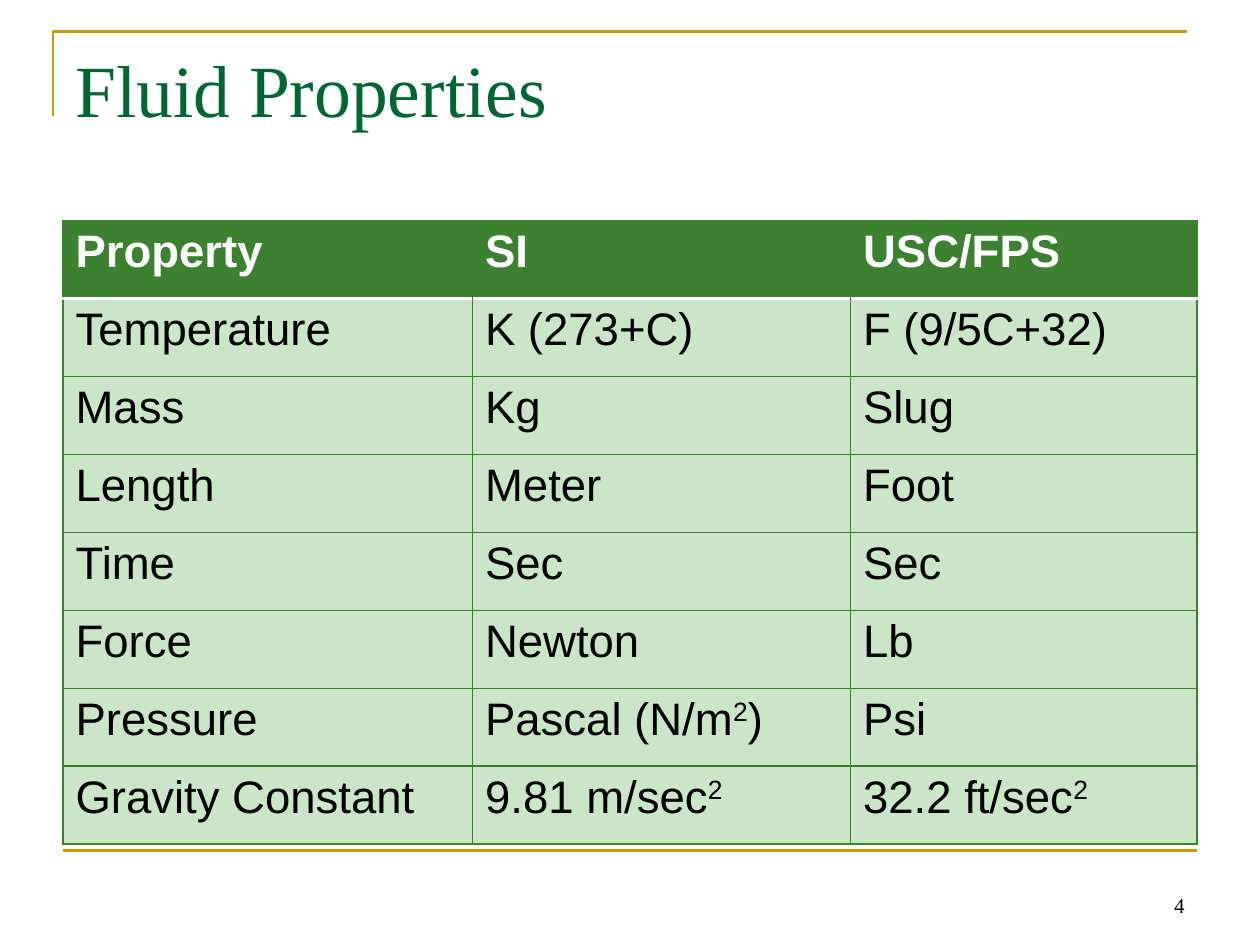
from lxml import etree
from pptx import Presentation, util as u
from pptx.dml.color import RGBColor
from pptx.enum import shapes, text
from pptx.oxml.ns import qn

HUES = {"gold": "CC9900", "title": "006633", "head": "3B812F", "body": "CBE5C9",
        "edge": "38802C", "white": "FFFFFF", "black": "000000"}
SERIF, SANS = "Times New Roman", "Arial"
ROWS = [
    ["Property", "SI", "USC/FPS"],
    ["Temperature", "K (273+C)", "F (9/5C+32)"],
    ["Mass", "Kg", "Slug"],
    ["Length", "Meter", "Foot"],
    ["Time", "Sec", "Sec"],
    ["Force", "Newton", "Lb"],
    ["Pressure", "Pascal (N/m^2^)", "Psi"],
    ["Gravity Constant", "9.81 m/sec^2^", "32.2 ft/sec^2^"],
]


class Deck:
    """Holds the style and the current slide, on a grid of 40 columns by 30 rows."""

    def __init__(self):
        self.prs = Presentation()
        self.prs.slide_width, self.prs.slide_height = u.Inches(10), u.Inches(7.5)
        self.slide = self.prs.slides.add_slide(self.prs.slide_layouts[5])
        self.items = self.slide.shapes

    def grid(self, *cells):
        return [u.Inches(cell / 4) for cell in cells]

    def hue(self, name):
        return RGBColor.from_string(HUES[name])

    def add_words(self, para, words, size, face, hue, bold=False):
        for i, part in enumerate(words.split("^")):
            if not part:
                continue
            run = para.add_run()
            run.text = part
            look = {"size": u.Pt(size), "name": face, "bold": bold}
            for key, value in look.items():
                setattr(run.font, key, value)
            run.font.color.rgb = self.hue(hue)
            if i % 2:
                run.font._element.set("baseline", "30000")

    def fill_box(self, box, words, size, hue, anchor, align):
        frame = box.text_frame
        look = {"word_wrap": True, "vertical_anchor": anchor,
                "auto_size": text.MSO_AUTO_SIZE.NONE}
        for key, value in look.items():
            setattr(frame, key, value)
        para = frame.paragraphs[0]
        para.alignment = align
        self.add_words(para, words, size, SERIF, hue)

    def title(self, words, *area):
        box = self.items.title
        for key, value in zip(("left", "top", "width", "height"), self.grid(*area)):
            setattr(box, key, value)
        self.fill_box(box, words, 42, "title", text.MSO_ANCHOR.TOP, text.PP_ALIGN.LEFT)

    def label(self, words, *area):
        box = self.items.add_textbox(*self.grid(*area))
        self.fill_box(box, words, 12, "black", text.MSO_ANCHOR.BOTTOM, text.PP_ALIGN.RIGHT)

    def stroke(self, item):
        item.line.color.rgb = self.hue("gold")
        item.line.width = u.Pt(1.5)

    def rule(self, *ends):
        line = self.items.add_connector(shapes.MSO_CONNECTOR.STRAIGHT, *self.grid(*ends))
        self.stroke(line)
        etree.SubElement(line._element.spPr, qn("a:effectLst"))

    def corner(self, *points):
        first, *rest = [self.grid(*point) for point in points]
        pen = self.items.build_freeform(*first)
        pen.add_line_segments(rest, close=False)
        shape = pen.convert_to_shape()
        shape.fill.background()
        shape.shadow.inherit = False
        self.stroke(shape)

    def border(self, cell, side, hue, width):
        props = cell._tc.get_or_add_tcPr()
        line = etree.SubElement(props, qn("a:ln" + side), w=str(u.Pt(width)))
        fill = etree.SubElement(line, qn("a:solidFill"))
        etree.SubElement(fill, qn("a:srgbClr"), val=HUES[hue])

    def table(self, rows, widths, *area):
        grid = self.items.add_table(len(rows), len(widths), *self.grid(*area)).table
        for col, width in zip(grid.columns, self.grid(*widths)):
            col.width = width
        for r, row in enumerate(rows):
            for c, words in enumerate(row):
                cell = grid.cell(r, c)
                head = r == 0
                inner = "head" if head else "edge"
                white = ("white", 2)
                edges = {
                    "L": (inner if c else "edge", 0.75),
                    "R": (inner if c < len(row) - 1 else "edge", 0.75),
                    "T": white if r == 1 else ("edge", 0.75),
                    "B": white if head else ("edge", 0.75),
                }
                for side, (hue, width) in edges.items():
                    self.border(cell, side, hue, width)
                cell.fill.solid()
                cell.fill.fore_color.rgb = self.hue("head" if head else "body")
                self.add_words(cell.text_frame.paragraphs[0], words, 26, SANS,
                               "white" if head else "black", head)


def main():
    deck = Deck()
    deck.corner((1.68, 3.68), (1.68, 1), (37.68, 1))
    deck.rule(2, 27, 38, 27)
    deck.label("4", 28.68, 27.32, 9.32, 2)
    deck.title("Fluid Properties", 2, 1.2, 36, 5)
    deck.table(ROWS, (13, 12, 11), 2, 7, 36, 19.8)
    deck.prs.save("out.pptx")


if __name__ == "__main__":
    main()
